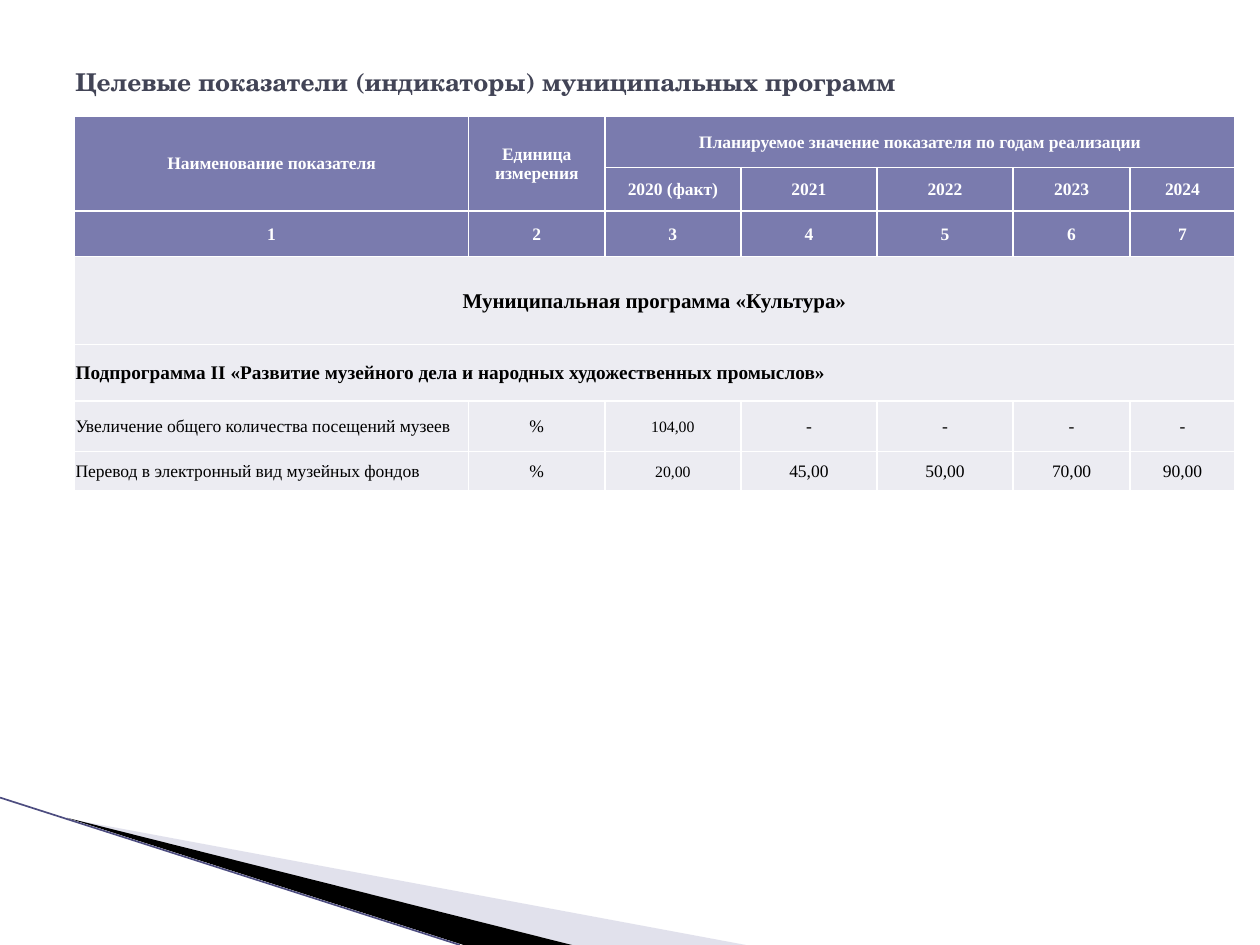
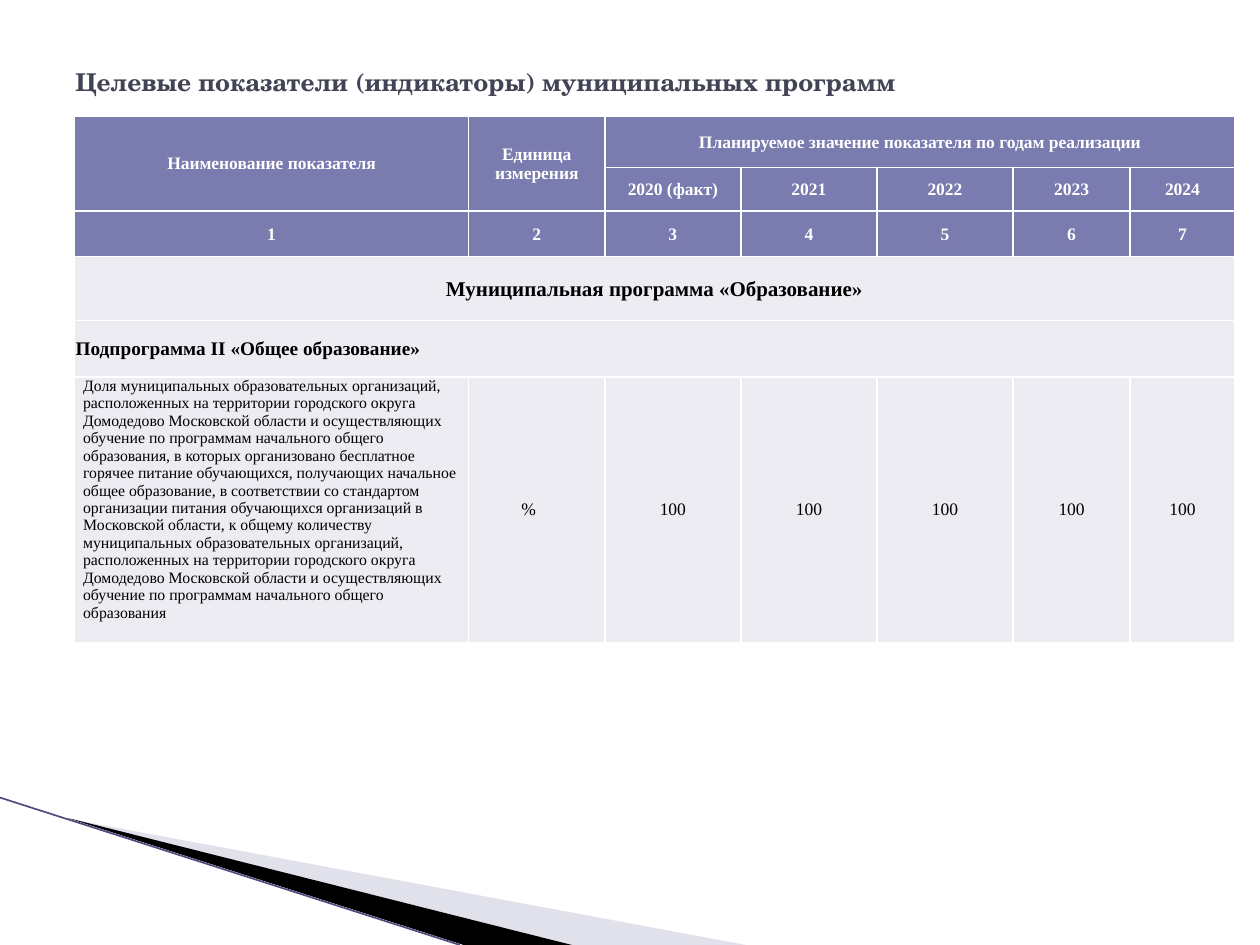
from lxml.etree import SubElement
from pptx import Presentation
from pptx.dml.color import RGBColor
from pptx.enum.shapes import MSO_CONNECTOR
from pptx.enum.text import MSO_ANCHOR, PP_ALIGN
from pptx.oxml.ns import qn
from pptx.util import Inches, Pt

COLORS = {
    "title": "424456",
    "header": "7A7BAE",
    "body": "ECECF2",
    "white": "FFFFFF",
    "black": "000000",
    "pale_wedge": "B6B6D1",
    "edge": "4D4D80",
}
TITLE_FONT, TABLE_FONT = "TeX Gyre Schola", "Times New Roman"
TITLE = "Целевые показатели (индикаторы) муниципальных программ"

COLUMN_WIDTHS = [3.13, 1.08, 1.08, 1.08, 1.08, 0.93, 0.83]
HEADER_HEIGHTS = [0.41, 0.32, 0.36]
HEADER_ROWS = [
    ["Наименование показателя", "Единица измерения",
     "Планируемое значение показателя по годам реализации"],
    ["", "", "2020 (факт)", "2021", "2022", "2023", "2024"],
    [str(number) for number in range(1, 8)],
]

# Cell margins: left, right, top, bottom
TIGHT = (0.01, 0.01, 0.01, 0)
WIDE = (0.07, 0.07, 0, 0)

# Cell formats: text size, weight, alignment and margins
HEADER = dict(size=10, bold=True, color="white", fill="header")
PROGRAM = dict(size=12, bold=True)
SUBPROGRAM = dict(size=11, bold=True, align=PP_ALIGN.LEFT)
NAME = dict(align=PP_ALIGN.LEFT)
FACT = dict(size=9)
LONG_NAME = dict(size=9, align=PP_ALIGN.LEFT, margins=WIDE, anchor=MSO_ANCHOR.TOP)
WIDE_UNIT = dict(margins=(0.07, 0.2, 0, 0))
WIDE_VALUE = dict(margins=WIDE)

PROGRAMS = [
    {
        "program": "Муниципальная программа «Культура»",
        "subprogram": "Подпрограмма II «Развитие музейного дела "
                      "и народных художественных промыслов»",
        "heights": [0.7, 0.45, 0.4, 0.31],
        "formats": [NAME, {}, FACT, {}, {}, {}, {}],
        "indicators": [
            ["Увеличение общего количества посещений музеев",
             "%", "104,00", "-", "-", "-", "-"],
            ["Перевод в электронный вид музейных фондов",
             "%", "20,00", "45,00", "50,00", "70,00", "90,00"],
        ],
    },
    {
        "program": "Муниципальная программа «Образование»",
        "subprogram": "Подпрограмма II «Общее образование»",
        "heights": [0.51, 0.45, 1.93],
        "formats": [LONG_NAME, WIDE_UNIT] + [WIDE_VALUE] * 5,
        "indicators": [
            ["Доля муниципальных образовательных организаций, расположенных "
             "на территории городского округа Домодедово Московской области "
             "и осуществляющих обучение по программам начального общего "
             "образования, в которых организовано бесплатное горячее питание "
             "обучающихся, получающих начальное общее образование, "
             "в соответствии со стандартом организации питания обучающихся "
             "организаций в Московской области, к общему количеству "
             "муниципальных образовательных организаций, расположенных "
             "на территории городского округа Домодедово Московской области "
             "и осуществляющих обучение по программам начального общего "
             "образования", "%"] + ["100"] * 5,
        ],
    },
]


def rgb(name):
    return RGBColor.from_string(COLORS[name])


def set_all(target, values):
    for attribute, value in values.items():
        setattr(target, attribute, value)


class IndicatorDeck:
    """Holds the shared style and the slide being built."""

    def __init__(self):
        self.presentation = Presentation()
        set_all(self.presentation, {"slide_width": Inches(10),
                                    "slide_height": Inches(7.5)})
        self.slide = None

    def new_slide(self):
        self.slide = self.presentation.slides.add_slide(
            self.presentation.slide_layouts[6])
        # Corner decoration
        self.wedge([(0.55, 6.5), (5.92, 7.5), (4.54, 7.5)], "pale_wedge", 40)
        self.wedge([(0.53, 6.49), (4.54, 7.5), (3.68, 7.5)], "black")
        self.edge((0, 6.33), (3.65, 7.5))
        self.title(TITLE)

    def wedge(self, points, color, opacity=100):
        start, *rest = [(Inches(x), Inches(y)) for x, y in points]
        builder = self.slide.shapes.build_freeform(*start)
        builder.add_line_segments(rest, close=True)
        wedge = builder.convert_to_shape()
        wedge.shadow.inherit = False
        wedge.line.fill.background()
        wedge.fill.solid()
        wedge.fill.fore_color.rgb = rgb(color)
        if opacity < 100:
            tint = wedge._element.spPr.find(qn("a:solidFill"))[0]
            SubElement(tint, qn("a:alpha"), val=str(opacity * 1000))

    def edge(self, start, end):
        edge = self.slide.shapes.add_connector(
            MSO_CONNECTOR.STRAIGHT, *map(Inches, start + end))
        edge.line.width = Pt(0.95)
        edge.line.color.rgb = rgb("edge")
        SubElement(edge._element.spPr, qn("a:effectLst"))

    def title(self, text):
        frame = self.slide.shapes.add_textbox(
            Inches(0.5), Inches(0.3), Inches(9), Inches(0.69)).text_frame
        set_all(frame, {"word_wrap": True, "vertical_anchor": MSO_ANCHOR.MIDDLE})
        self.label(frame, text, TITLE_FONT, 14, True, "title", PP_ALIGN.LEFT)

    def label(self, frame, text, font, size, bold, color, align):
        paragraph = frame.paragraphs[0]
        paragraph.alignment = align
        run = paragraph.add_run()
        run.text = text
        set_all(run.font, {"name": font, "size": Pt(size), "bold": bold})
        run.font.color.rgb = rgb(color)

    def cell(self, cell, text, size=10, bold=False, color="black", fill="body",
             align=PP_ALIGN.CENTER, margins=TIGHT, anchor=MSO_ANCHOR.MIDDLE):
        sides = ("margin_left", "margin_right", "margin_top", "margin_bottom")
        set_all(cell, dict(zip(sides, map(Inches, margins)),
                           vertical_anchor=anchor))
        # Borders precede the fill in the cell properties
        properties = cell._tc.get_or_add_tcPr()
        for side in ("lnL", "lnR", "lnT", "lnB"):
            border = SubElement(properties, qn(f"a:{side}"), w=str(Pt(1)))
            paint = SubElement(border, qn("a:solidFill"))
            SubElement(paint, qn("a:srgbClr"), val=COLORS["white"])
        cell.fill.solid()
        cell.fill.fore_color.rgb = rgb(fill)
        if text:
            self.label(cell.text_frame, text, TABLE_FONT, size, bold, color, align)

    def indicator_table(self, program, subprogram, heights, formats, indicators):
        heights = HEADER_HEIGHTS + heights
        rows = [(texts, [HEADER] * 7) for texts in HEADER_ROWS]
        rows += [([program], [PROGRAM] * 7), ([subprogram], [SUBPROGRAM] * 7)]
        rows += [(texts, formats) for texts in indicators]
        table = self.slide.shapes.add_table(
            len(rows), len(COLUMN_WIDTHS), Inches(0.59), Inches(0.92),
            Inches(sum(COLUMN_WIDTHS)), Inches(sum(heights))).table
        set_all(table, {"first_row": False, "horz_banding": False})
        for column, width in zip(table.columns, COLUMN_WIDTHS):
            column.width = Inches(width)
        for row, height in zip(table.rows, heights):
            row.height = Inches(height)
        # Two tall headings, the years heading and two full-width rows
        for first, last in [((0, 0), (1, 0)), ((0, 1), (1, 1)), ((0, 2), (0, 6)),
                            ((3, 0), (3, 6)), ((4, 0), (4, 6))]:
            table.cell(*first).merge(table.cell(*last))
        for r, (texts, row_formats) in enumerate(rows):
            texts = texts + [""] * (len(COLUMN_WIDTHS) - len(texts))
            for c, (text, cell_format) in enumerate(zip(texts, row_formats)):
                self.cell(table.cell(r, c), text, **cell_format)


def main():
    deck = IndicatorDeck()
    for content in PROGRAMS:
        deck.new_slide()
        deck.indicator_table(**content)
    deck.presentation.save("out.pptx")


if __name__ == "__main__":
    main()
